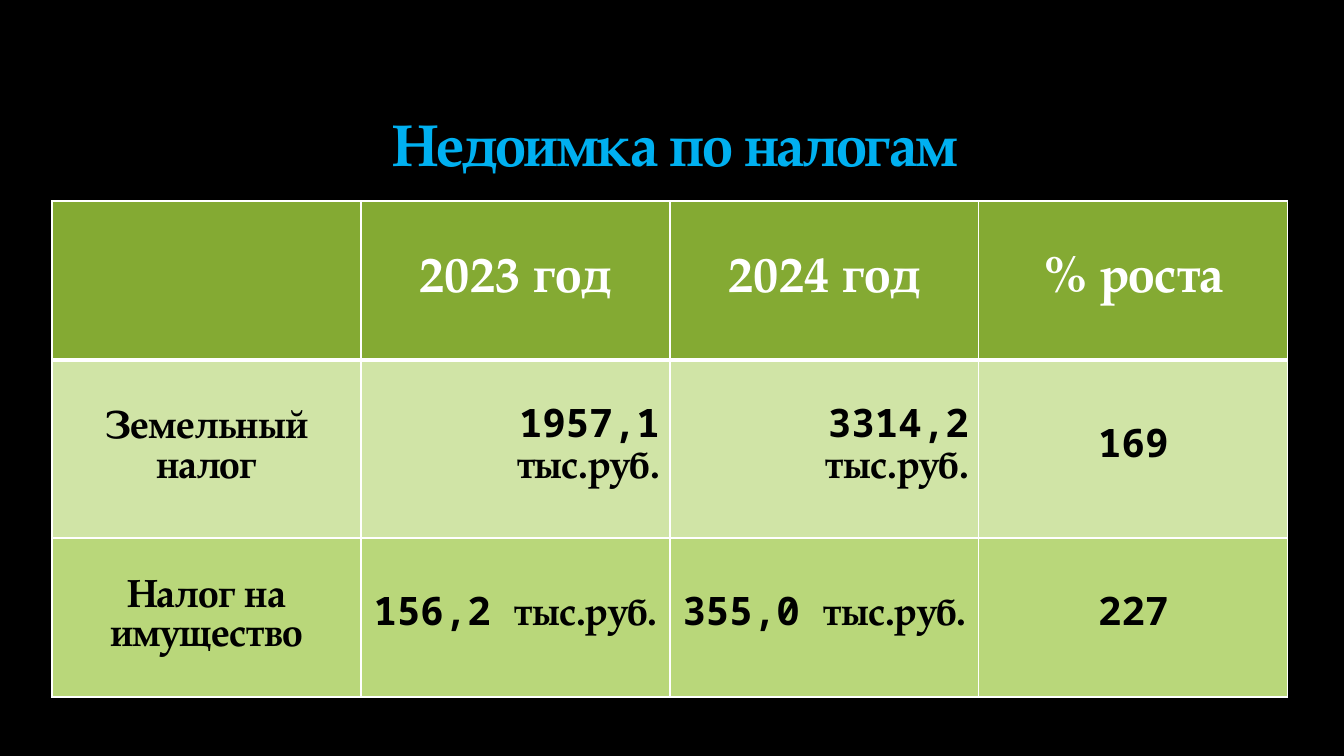
from lxml.etree import SubElement
from pptx import Presentation
from pptx.dml.color import RGBColor
from pptx.enum.text import MSO_ANCHOR, PP_ALIGN
from pptx.oxml.ns import qn
from pptx.util import Emu, Pt

PX = 9072
COLORS = {
    "background": "000000",
    "title": "00B0F0",
    "outline": "462219",
    "header": "84AA33",
    "land": "D0E4A6",
    "property": "B9D77A",
    "white": "FFFFFF",
    "black": "000000",
}
SERIF = "TeX Gyre Pagella"
MONO = "Noto Sans Mono"
UNIT = ("тыс.руб.", SERIF)
CENTER, RIGHT = PP_ALIGN.CENTER, PP_ALIGN.RIGHT
COLUMN_WIDTH = 309
ROW_HEIGHTS = [159, 178, 159]
HEADINGS = ["", "2023 год", "2024 год", "% роста"]
TAXES = [
    ("land", "Земельный налог", ["1957,1 ", "3314,2 "], "169", RIGHT),
    ("property", "Налог на имущество", ["156,2 ", "355,0 "], "227", CENTER),
]


def px(value):
    return Emu(value * PX)


def rgb(name):
    return RGBColor.from_string(COLORS[name])


def write_text(frame, parts, size, color, align=CENTER, leading=None):
    para = frame.paragraphs[0]
    para.alignment = align
    if leading:
        para.line_spacing = leading
    for text, font in parts:
        span = para.add_run()
        span.text = text
        span.font.name = font
        span.font.size = Pt(size)
        span.font.bold = True
        span.font.color.rgb = rgb(color)
    return para


def add_line(parent, tag, width, color, alpha=None):
    line = SubElement(parent, qn(tag), w=str(Pt(width)))
    fill = SubElement(line, qn("a:solidFill"))
    shade = SubElement(fill, qn("a:srgbClr"), val=COLORS[color])
    if alpha:
        SubElement(shade, qn("a:alpha"), val=str(alpha * 1000))
    return line


def add_title(page, text):
    box = page.shapes.add_textbox(px(89), px(37), px(1172), px(146))
    frame = box.text_frame
    frame.word_wrap = True
    frame.vertical_anchor = MSO_ANCHOR.BOTTOM
    para = write_text(frame, [(text, SERIF)], 42, "title")
    properties = para.runs[0].font._element
    properties.set("spc", "-100")
    properties.insert(0, add_line(properties, "a:ln", 0.25, "outline", 25))


def fill_cell(cell, fill, parts, size, color, align=CENTER, top=1, bottom=1, leading=None):
    cell.vertical_anchor = MSO_ANCHOR.MIDDLE
    write_text(cell.text_frame, parts, size, color, align, leading)
    properties = cell._tc.get_or_add_tcPr()
    for side, width in (("L", 1), ("R", 1), ("T", top), ("B", bottom)):
        add_line(properties, f"a:ln{side}", width, "white")
    cell.fill.solid()
    cell.fill.fore_color.rgb = rgb(fill)


def add_tax_table(page):
    width = COLUMN_WIDTH * len(HEADINGS)
    table = page.shapes.add_table(
        len(ROW_HEIGHTS), len(HEADINGS), px(52), px(201), px(width), px(sum(ROW_HEIGHTS))
    ).table
    for column in table.columns:
        column.width = px(COLUMN_WIDTH)
    for row, height in zip(table.rows, ROW_HEIGHTS):
        row.height = px(height)
    for index, heading in enumerate(HEADINGS):
        parts = [(heading, SERIF)] if heading else []
        fill_cell(table.cell(0, index), "header", parts, 36, "white", bottom=3)
    for row, (fill, name, amounts, growth, align) in enumerate(TAXES, 1):
        contents = [([(name, SERIF)], CENTER)]
        contents += [([(amount, MONO), UNIT], align) for amount in amounts]
        contents.append(([(growth, MONO)], CENTER))
        for index, (parts, side) in enumerate(contents):
            fill_cell(
                table.cell(row, index), fill, parts, 28, "black", side,
                top=3 if row == 1 else 1, leading=Pt(28),
            )


def main():
    deck = Presentation()
    deck.slide_width = px(1344)
    deck.slide_height = px(756)
    page = deck.slides.add_slide(deck.slide_layouts[6])
    page.background.fill.solid()
    page.background.fill.fore_color.rgb = rgb("background")
    add_title(page, "Недоимка по налогам")
    add_tax_table(page)
    deck.save("out.pptx")


if __name__ == "__main__":
    main()
